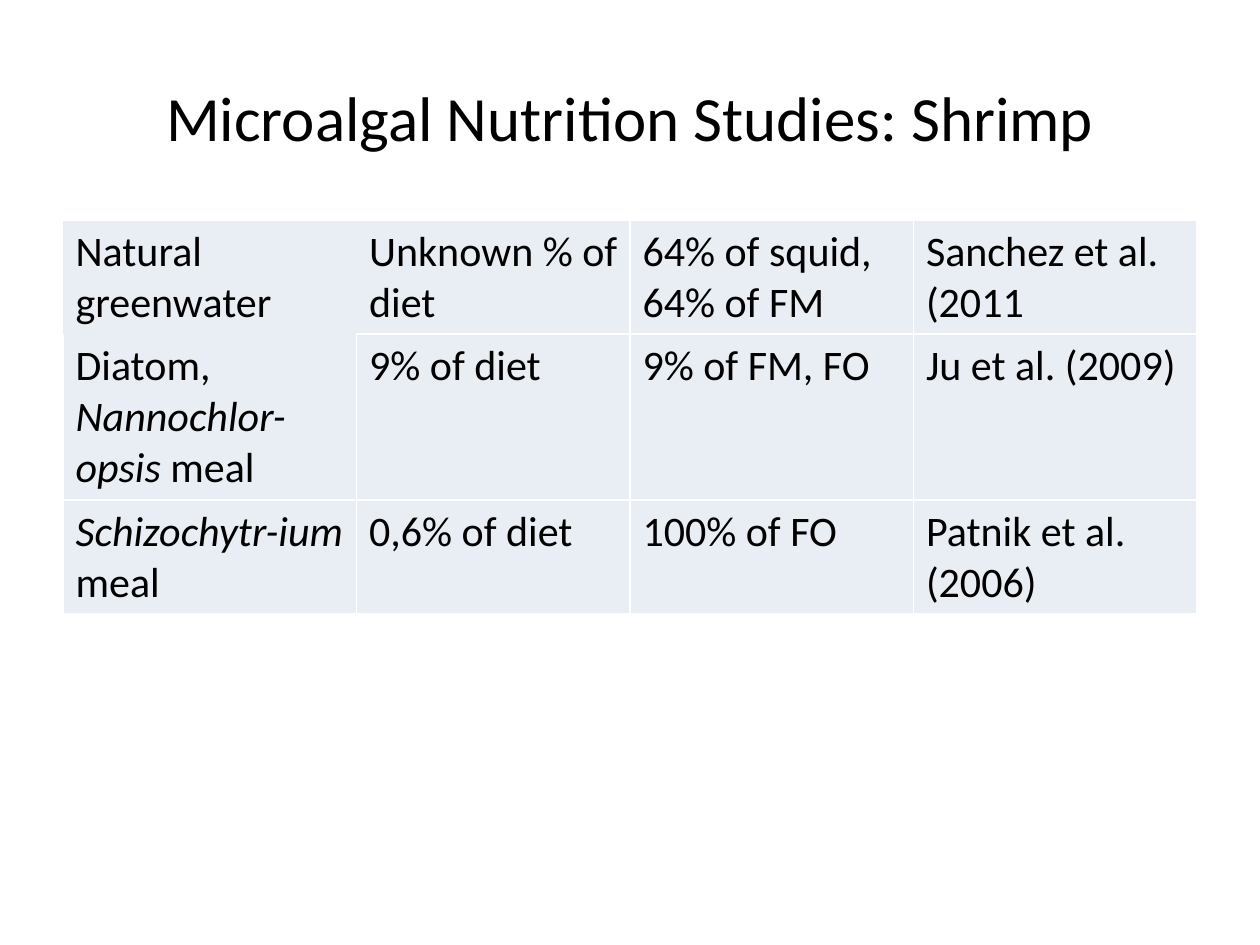
import lxml.etree
import pptx
import pptx.dml.color
import pptx.enum.text
import pptx.oxml.ns
import pptx.util
from pptx.util import Inches


def color(value):
    return pptx.dml.color.RGBColor.from_string(value)


def add_border(cell, side, visible):
    properties = cell._tc.get_or_add_tcPr()
    line = lxml.etree.SubElement(properties, pptx.oxml.ns.qn("a:ln" + side), w="12700")
    if visible:
        fill = lxml.etree.SubElement(line, pptx.oxml.ns.qn("a:solidFill"))
        lxml.etree.SubElement(fill, pptx.oxml.ns.qn("a:srgbClr"), val="FFFFFF")
    else:
        lxml.etree.SubElement(line, pptx.oxml.ns.qn("a:noFill"))


presentation = pptx.Presentation()
presentation.slide_width = Inches(10)
presentation.slide_height = Inches(7.5)
slide = presentation.slides.add_slide(presentation.slide_layouts[6])

title = slide.shapes.add_textbox(Inches(0.5), Inches(0.3), Inches(9), Inches(1.25))
title.text_frame.word_wrap = True
title.text_frame.vertical_anchor = pptx.enum.text.MSO_ANCHOR.MIDDLE
paragraph = title.text_frame.paragraphs[0]
paragraph.text = "Microalgal Nutrition Studies: Shrimp"
paragraph.alignment = pptx.enum.text.PP_ALIGN.CENTER
paragraph.font.name = "Calibri"
paragraph.font.size = pptx.util.Pt(36)
paragraph.font.color.rgb = color("000000")

studies = [
    [[("Natural greenwater", False)], "Unknown % of diet", "64% of squid, 64% of FM", "Sanchez et al. (2011"],
    [[("Diatom, ", False), ("Nannochlor-opsis ", True), ("meal", False)], "9% of diet", "9% of FM, FO", "Ju et al. (2009)"],
    [[("Schizochytr-ium ", True), ("meal", False)], "0,6% of diet", "100% of FO", "Patnik et al. (2006)"],
]
column_widths = [2.33, 2.17, 2.25, 2.25]
row_heights = [0.9, 1.32, 0.9]
open_sides = {(0, 0): "LRTB", (0, 1): "L", (1, 0): "T"}

table = slide.shapes.add_table(
    len(studies), len(column_widths), Inches(0.5), Inches(1.75), Inches(9), Inches(sum(row_heights))
).table
table.first_row = False
table.horz_banding = False
for column, width in zip(table.columns, column_widths):
    column.width = Inches(width)

for row_index, study in enumerate(studies):
    table.rows[row_index].height = Inches(row_heights[row_index])
    for column_index, content in enumerate(study):
        cell = table.cell(row_index, column_index)
        for side in "LRTB":
            add_border(cell, side, side not in open_sides.get((row_index, column_index), ""))
        cell.fill.solid()
        cell.fill.fore_color.rgb = color("E9EDF4")
        paragraph = cell.text_frame.paragraphs[0]
        paragraph.font.name = "Calibri"
        paragraph.font.size = pptx.util.Pt(24)
        paragraph.font.color.rgb = color("000000")
        if column_index:
            paragraph.text = content
            continue
        for text, italic in content:
            run = paragraph.add_run()
            run.text = text
            run.font.italic = italic

presentation.save("out.pptx")
